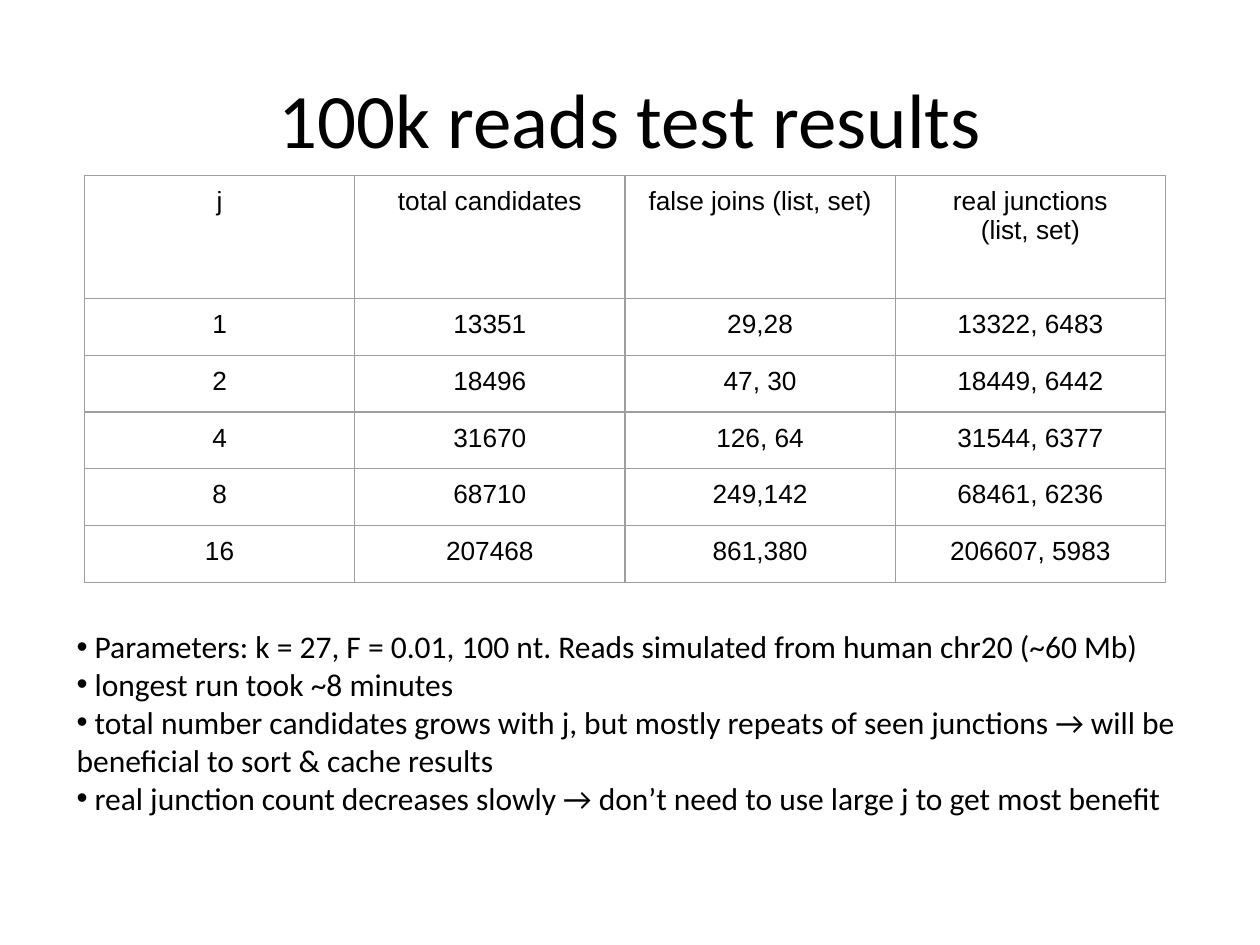
from lxml.etree import SubElement
from pptx import Presentation
from pptx.dml.color import RGBColor
from pptx.enum.text import MSO_ANCHOR, PP_ALIGN
from pptx.oxml.ns import qn
from pptx.util import Inches, Pt

WIDE, HIGH = Inches(10), Inches(7.5)
BLACK, GREY = "000000", "9E9E9E"
HEAD = {"name": "Calibri", "size": Pt(44)}
GRID = {"name": "Arial", "size": Pt(15)}
NOTE = {"name": "Calibri", "size": Pt(18)}
PAD = {f"margin_{side}": Inches(0.09) for side in ("left", "right", "top", "bottom")}

ROWS = [
    ("j", "total candidates", "false joins (list, set)", "real junctions\n(list, set)"),
    ("1", "13351", "29,28", "13322, 6483"),
    ("2", "18496", "47, 30", "18449, 6442"),
    ("4", "31670", "126, 64", "31544, 6377"),
    ("8", "68710", "249,142", "68461, 6236"),
    ("16", "207468", "861,380", "206607, 5983"),
]
NOTES = [
    "Parameters: k = 27, F = 0.01, 100 nt. Reads simulated from human chr20 (~60 Mb)",
    "longest run took ~8 minutes",
    "total number candidates grows with j, but mostly repeats of seen junctions → will be beneficial to sort & cache results",
    "real junction count decreases slowly → don’t need to use large j to get most benefit",
]


def paint(color):
    return RGBColor.from_string(color)


def apply(item, look):
    for key, value in look.items():
        setattr(item, key, value)


def scale(box):
    left, top, width, height = box
    return int(left * WIDE), int(top * HIGH), int(width * WIDE), int(height * HIGH)


def write(frame, lines, look, align):
    frame.text = "\n".join(lines)
    for para in frame.paragraphs:
        para.alignment = align
        for run in para.runs:
            apply(run.font, look)
            run.font.color.rgb = paint(BLACK)


def add_text(slide, box, lines, look, align, anchor):
    frame = slide.shapes.add_textbox(*scale(box)).text_frame
    apply(frame, {"word_wrap": True, "vertical_anchor": anchor})
    write(frame, lines, look, align)
    return frame


def add_title(slide, box):
    add_text(slide, box, ["100k reads test results"], HEAD, PP_ALIGN.CENTER, MSO_ANCHOR.MIDDLE)


def edge(cell):
    props = cell._tc.get_or_add_tcPr()
    for side in ("a:lnL", "a:lnR", "a:lnT", "a:lnB"):
        line = SubElement(props, qn(side), w=str(Pt(0.75)))
        fill = SubElement(line, qn("a:solidFill"))
        SubElement(fill, qn("a:srgbClr"), val=GREY)


def add_grid(slide, box):
    left, top, width, height = scale(box)
    table = slide.shapes.add_table(len(ROWS), len(ROWS[0]), left, top, width, height).table
    apply(table, {"first_row": False, "horz_banding": False})
    low = Inches(0.45)
    for row in table.rows:
        row.height = low
    table.rows[0].height = height - low * (len(ROWS) - 1)
    for row, words in zip(table.rows, ROWS):
        for cell, text in zip(row.cells, words):
            write(cell.text_frame, [text], GRID, PP_ALIGN.CENTER)
            apply(cell, PAD)
            edge(cell)
            cell.fill.background()


def add_notes(slide, box):
    lines = [f" {note}" for note in NOTES]
    frame = add_text(slide, box, lines, NOTE, PP_ALIGN.LEFT, MSO_ANCHOR.TOP)
    for para in frame.paragraphs:
        props = para._p.get_or_add_pPr()
        SubElement(props, qn("a:buFont"), typeface="Arial")
        SubElement(props, qn("a:buChar"), char="•")


def main():
    deck = Presentation()
    apply(deck, {"slide_width": WIDE, "slide_height": HIGH})
    slide = deck.slides.add_slide(deck.slide_layouts[6])
    add_title(slide, (0.05, 0.04, 0.9, 0.17))
    add_grid(slide, (0.067, 1.39 / 7.5, 0.858, 3.23 / 7.5))
    add_notes(slide, (0.051, 4.93 / 7.5, 0.906, 2.22 / 7.5))
    deck.save("out.pptx")


if __name__ == "__main__":
    main()
